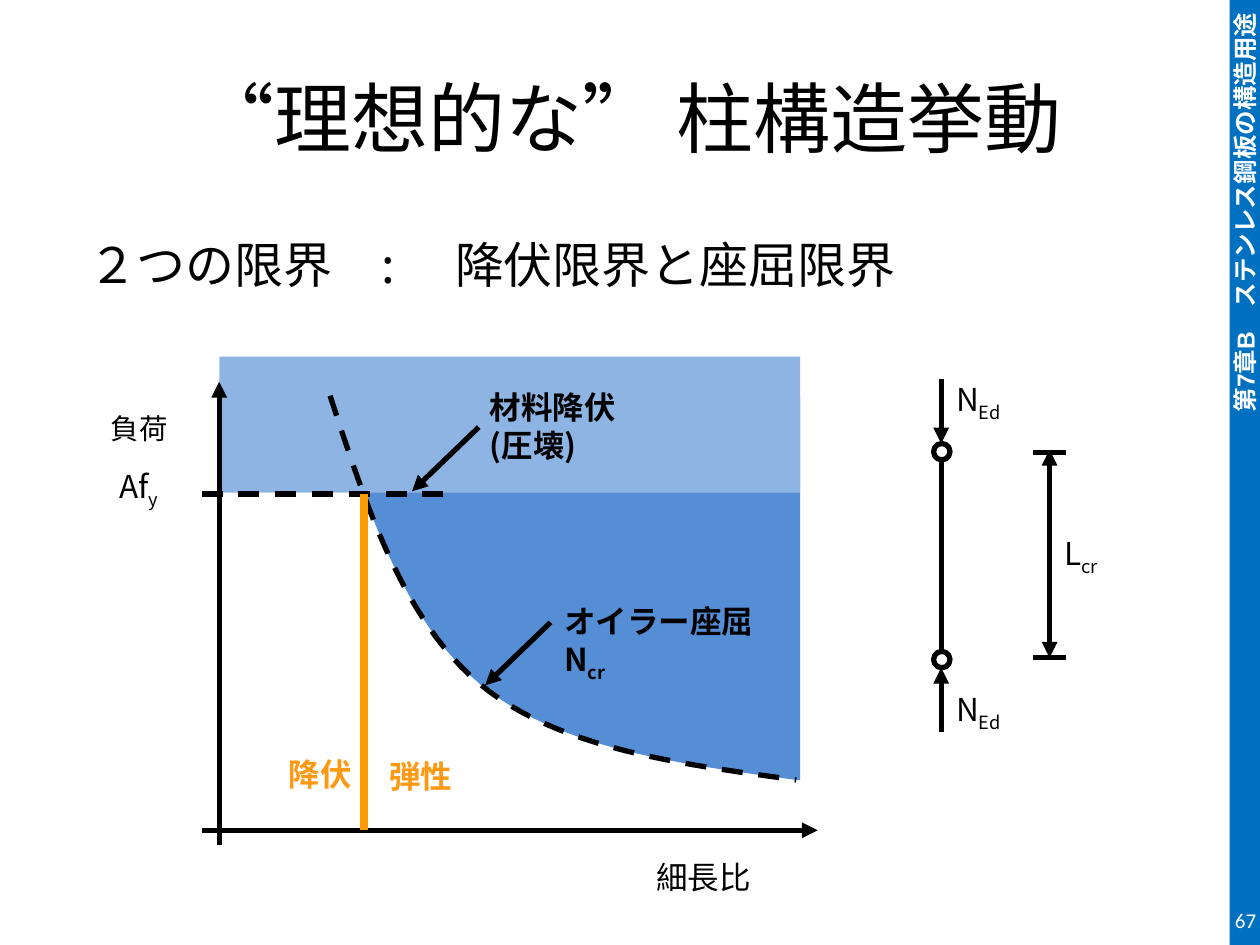
from lxml.etree import SubElement
from pptx import Presentation
from pptx.dml.color import RGBColor
from pptx.enum.dml import MSO_LINE
from pptx.enum.shapes import MSO_CONNECTOR, MSO_SHAPE
from pptx.enum.text import MSO_ANCHOR, PP_ALIGN
from pptx.oxml.ns import qn
from pptx.util import Inches, Pt

SANS = "Noto Sans CJK JP"
BLACK, WHITE, ORANGE, TINT = "000000", "FFFFFF", "FF9900", "FE9914"
LEFT, RIGHT, CENTER = PP_ALIGN.LEFT, PP_ALIGN.RIGHT, PP_ALIGN.CENTER

TITLE = "“理想的な” 柱構造挙動"
CHAPTER = "第7章B　ステンレス鋼板の構造用途"
PAGE = "67"
SUBMARK = "|"

LABELS = [
    ((0.6, 1.81, 7.18, 0.57), ["２つの限界　: 　降伏限界と座屈限界"], 28, BLACK, False, LEFT),
    ((0.78, 2.95, 0.85, 0.76), ["|負荷"], 28, BLACK, False, LEFT),
    ((0.85, 3.66, 0.85, 0.76), ["Af|y"], 18, BLACK, False, LEFT),
    ((3.32, 6.76, 4.58, 0.51), ["細長比 "], 18, BLACK, False, CENTER),
    ((3.79, 3.03, 2.38, 0.63), ["材料降伏", "(圧壊)"], 18, BLACK, True, LEFT),
    ((4.38, 4.73, 1.93, 0.64), ["オイラー座屈", "N|cr"], 18, BLACK, True, LEFT),
    ((1.6, 5.94, 1.29, 0.4), ["降伏"], 18, TINT, True, RIGHT),
    ((2.99, 5.96, 1.58, 0.4), ["弾性"], 18, TINT, True, LEFT),
    ((7.49, 2.97, 0.83, 0.64), ["N|Ed"], 18, BLACK, False, LEFT),
    ((7.49, 5.43, 0.83, 0.64), ["N|Ed"], 18, BLACK, False, LEFT),
    ((8.35, 4.19, 0.69, 0.63), ["L|cr"], 18, BLACK, False, LEFT),
]

AXES = [(1.74, 6.71, 1.74, 3.03), (1.6, 6.59, 6.49, 6.59)]
POINTERS = [(3.8, 3.39, 3.27, 3.9), (4.37, 4.94, 3.85, 5.44)]
LOADS = [(7.47, 3.01, 7.47, 3.52), (7.47, 5.81, 7.47, 5.3)]
BARS = [(7.47, 3.65, 7.47, 5.17), (8.2, 3.59, 8.46, 3.59), (8.2, 5.22, 8.46, 5.22)]
SPAN = (8.33, 3.57, 8.33, 5.22)
YIELD = (1.6, 3.92, 3.58, 3.92)
LIMIT = (2.89, 6.59, 2.89, 3.92)
PINS = [(7.41, 3.52), (7.41, 5.17)]
EULER = [
    [(2.62, 3.14), (2.91, 4.03), (3.2, 4.92), (3.81, 5.43)],
    [(3.81, 5.43), (4.43, 5.94), (5.37, 6.06), (6.32, 6.19)],
]


def color(code):
    """Turn a hex string into a colour."""
    return RGBColor.from_string(code)


def place(shape, box):
    """Move and size a shape in inches."""
    shape.left, shape.top, shape.width, shape.height = map(Inches, box)


def style(run, size, code, bold=False, face=SANS):
    """Format one run for Latin and Japanese text."""
    font = run.font
    font.size, font.bold, font.name = Pt(size), bold, face
    font.color.rgb = color(code)
    SubElement(run._r.get_or_add_rPr(), qn("a:ea"), typeface=face)


def label(slide, box, lines, size, code, bold, align, face=SANS):
    """Add a text box whose lines may end in a subscript."""
    shape = slide.shapes.add_textbox(*map(Inches, box))
    frame = shape.text_frame
    frame.word_wrap = True
    frame.text = "\n".join(lines)
    for para, line in zip(frame.paragraphs, lines):
        main, _, sub = line.partition(SUBMARK)
        para.text = main
        para.alignment = align
        if sub:
            low = para.add_run()
            low.text = sub
            low._r.get_or_add_rPr().set("baseline", "-25000")
        for run in para.runs:
            style(run, size, code, bold, face)
    return frame


def stroke(shape, code=BLACK, width=3, heads=(), dash=False):
    """Set a line's colour, width, dash and arrowheads."""
    line = shape.line
    line.color.rgb, line.width = color(code), Pt(width)
    if dash:
        line.dash_style = MSO_LINE.DASH
    for head in heads:
        SubElement(shape._element.spPr.find(qn("a:ln")), qn("a:" + head), type="triangle")


def link(slide, ends, **look):
    """Add a straight line without shadow."""
    line = slide.shapes.add_connector(MSO_CONNECTOR.STRAIGHT, *map(Inches, ends))
    stroke(line, **look)
    SubElement(line._element.spPr, qn("a:effectLst"))


def fill(shape, code):
    """Give a shape a plain fill with no outline."""
    shape.shadow.inherit = False
    shape.fill.solid()
    shape.fill.fore_color.rgb = color(code)
    shape.line.fill.background()


def bezier(ends, steps=24):
    """Sample a cubic curve."""
    for i in range(steps + 1):
        t = i / steps
        parts = ((1 - t) ** 3, 3 * t * (1 - t) ** 2, 3 * t * t * (1 - t), t ** 3)
        yield tuple(sum(p * e[k] for p, e in zip(parts, ends)) for k in (0, 1))


def outline(slide, points, close):
    """Draw a freeform through points in inches."""
    spots = [(Inches(x), Inches(y)) for x, y in points]
    pen = slide.shapes.build_freeform(*spots[0])
    pen.add_line_segments(spots[1:], close=close)
    shape = pen.convert_to_shape()
    shape.shadow.inherit = False
    return shape


def main():
    """Build the column behaviour slide."""
    deck = Presentation()
    deck.slide_width, deck.slide_height = Inches(10), Inches(7.5)
    slide = deck.slides.add_slide(deck.slide_layouts[5])
    shapes = slide.shapes

    title = shapes.title
    place(title, (0.5, 0.3, 9, 1.25))
    title.text_frame.text = TITLE
    title.text_frame.vertical_anchor = MSO_ANCHOR.MIDDLE
    para = title.text_frame.paragraphs[0]
    para.alignment = CENTER
    style(para.runs[0], 44, BLACK)

    side = shapes.add_shape(MSO_SHAPE.RECTANGLE, *map(Inches, (9.76, 0, 0.24, 7.5)))
    fill(side, "0070C0")
    frame = side.text_frame
    frame.text = CHAPTER
    frame.vertical_anchor = MSO_ANCHOR.MIDDLE
    frame._txBody.bodyPr.set("vert", "vert270")
    frame.paragraphs[0].alignment = RIGHT
    style(frame.paragraphs[0].runs[0], 14, WHITE, True, "Arial")

    curve = [*bezier(EULER[0]), *list(bezier(EULER[1]))[1:]]
    fill(outline(slide, curve + [(6.35, 6.19), (6.35, 3.15)], True), "558ED5")
    zone = shapes.add_shape(MSO_SHAPE.RECTANGLE, *map(Inches, (1.74, 2.83, 4.61, 1.08)))
    fill(zone, "8EB4E3")

    for ends in AXES + POINTERS + LOADS:
        link(slide, ends, heads=["tailEnd"])
    for ends in BARS:
        link(slide, ends)
    link(slide, SPAN, heads=["headEnd", "tailEnd"])
    link(slide, YIELD, dash=True)
    euler = outline(slide, curve, False)
    euler.fill.background()
    stroke(euler, dash=True)
    link(slide, LIMIT, code=ORANGE, width=4.5)

    for x, y in PINS:
        pin = shapes.add_shape(MSO_SHAPE.OVAL, *map(Inches, (x, y, 0.13, 0.13)))
        pin.shadow.inherit = False
        pin.fill.background()
        stroke(pin)

    for item in LABELS:
        label(slide, *item)
    frame = label(slide, (9.5, 7.1, 0.47, 0.4), [PAGE], 12, WHITE, False, RIGHT, "Calibri")
    frame.vertical_anchor = MSO_ANCHOR.MIDDLE
    frame.margin_left = frame.margin_right = frame.margin_top = frame.margin_bottom = 0
    deck.save("out.pptx")


if __name__ == "__main__":
    main()
